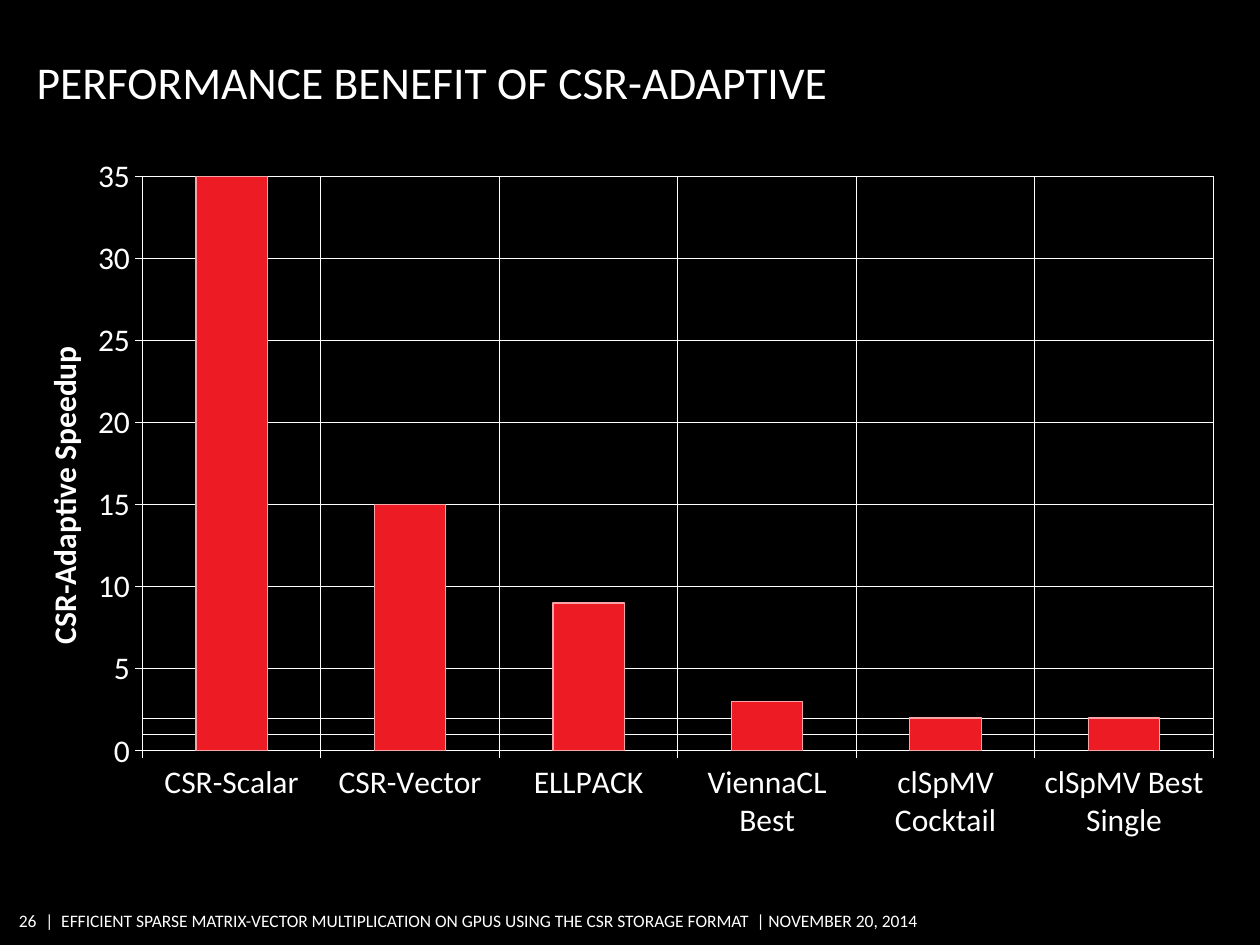
from lxml.etree import SubElement
from pptx import Presentation
from pptx.chart.data import CategoryChartData
from pptx.dml.color import RGBColor
from pptx.enum.chart import XL_CHART_TYPE, XL_TICK_MARK
from pptx.enum.shapes import MSO_CONNECTOR
from pptx.enum.text import MSO_ANCHOR, PP_ALIGN
from pptx.oxml import parse_xml
from pptx.oxml.ns import nsdecls, qn
from pptx.util import Inches, Pt

TITLE = "PERFORMANCE BENEFIT OF CSR-ADAPTIVE"
AXIS_TITLE = "CSR-Adaptive Speedup"
SPEEDUPS = {
    "CSR-Scalar": 35,
    "CSR-Vector": 15,
    "ELLPACK": 9,
    "ViennaCL Best": 3,
    "clSpMV Cocktail": 2,
    "clSpMV Best Single": 2,
}
FOOTER = [
    ("26", 0.13, 0.16, PP_ALIGN.RIGHT),
    ("|  EFFICIENT SPARSE MATRIX-VECTOR MULTIPLICATION ON GPUS USING THE CSR "
     "STORAGE FORMAT  | NOVEMBER 20, 2014", 0.36, 7.08, PP_ALIGN.LEFT),
]
CHART = (0.29, 1.18, 9.49, 5.64)
PLOT = (1.13, 1.4, 8.5, 4.56)
GUIDE_YS = [5.83, 5.7]
BLACK, WHITE, RED, PINK = "000000", "FFFFFF", "ED1C24", "F8A4A7"


def rgb(value):
    """Turn a hex string into a colour."""
    return RGBColor.from_string(value)


def style_font(font, size, bold=False):
    """Apply the slide's white Calibri at the given size."""
    for name, value in dict(name="Calibri", size=Pt(size), bold=bold).items():
        setattr(font, name, value)
    font.color.rgb = rgb(WHITE)


def style_line(line, color=WHITE):
    """Draw a thin line in the given colour."""
    line.color.rgb = rgb(color)
    line.width = Pt(0.75)


def write(sp, text, size, align, **frame):
    """Fill a shape with one styled paragraph."""
    tf = sp.text_frame
    for name, value in frame.items():
        setattr(tf, name, value)
    p = tf.paragraphs[0]
    p.alignment = align
    r = p.add_run()
    r.text = text
    style_font(r.font, size)


def set_layout(parent, index, places, target=""):
    """Give a chart part a manual layout in fractions of the chart."""
    for old in parent.findall(qn("c:layout")):
        parent.remove(old)
    values = "".join(f'<c:{k} val="{v:.4f}"/>' for k, v in places.items())
    parent.insert(index, parse_xml(
        f'<c:layout {nsdecls("c")}><c:manualLayout>{target}<c:xMode val="edge"/>'
        f'<c:yMode val="edge"/>{values}</c:manualLayout></c:layout>'))


def add_guide(s, y):
    """Add a horizontal guide line across the plot."""
    left, _, width, _ = PLOT
    line = s.shapes.add_connector(MSO_CONNECTOR.STRAIGHT, Inches(left), Inches(y),
                                  Inches(left + width), Inches(y))
    style_line(line.line)
    SubElement(line._element.spPr, qn("a:effectLst"))


def add_speedup_chart(s):
    """Add the column chart of speedups."""
    data = CategoryChartData()
    data.categories = list(SPEEDUPS)
    data.add_series("Series 1", list(SPEEDUPS.values()))
    chart = s.shapes.add_chart(XL_CHART_TYPE.COLUMN_CLUSTERED,
                               *(Inches(v) for v in CHART), data).chart
    chart.has_legend = chart.has_title = False
    style_font(chart.font, 10)
    for axis in (chart.category_axis, chart.value_axis):
        axis.has_major_gridlines = True
        axis.major_tick_mark = XL_TICK_MARK.OUTSIDE
        style_line(axis.major_gridlines.format.line)
        style_line(axis.format.line)
        style_font(axis.tick_labels.font, 18)
    axis = chart.value_axis
    for name, value in dict(minimum_scale=0, maximum_scale=35, major_unit=5).items():
        setattr(axis, name, value)
    tf = axis.axis_title.text_frame
    tf.text = AXIS_TITLE
    style_font(tf.paragraphs[0].runs[0].font, 18, True)
    body = tf._txBody.find(qn("a:bodyPr"))
    body.set("rot", "-5400000")
    body.set("vert", "horz")
    set_layout(axis.axis_title._element, 1, dict(x=0, y=0.27))
    plot = chart.plots[0]
    plot.gap_width = 150
    plot.vary_by_categories = False
    bars = plot.series[0].format
    bars.fill.solid()
    bars.fill.fore_color.rgb = rgb(RED)
    style_line(bars.line, PINK)
    left, top, width, height = CHART
    x, y, w, h = PLOT
    set_layout(chart._chartSpace.chart.plotArea, 0,
               dict(x=(x - left) / width, y=(y - top) / height, w=w / width, h=h / height),
               '<c:layoutTarget val="inner"/>')


def main():
    """Build and save the slide."""
    prs = Presentation()
    prs.slide_width, prs.slide_height = Inches(10), Inches(7.5)
    s = prs.slides.add_slide(prs.slide_layouts[5])
    s.background.fill.solid()
    s.background.fill.fore_color.rgb = rgb(BLACK)
    for text, left, width, align in FOOTER:
        sp = s.shapes.add_textbox(Inches(left), Inches(7.18), Inches(width), Inches(0.26))
        write(sp, text, 10, align, word_wrap=False, vertical_anchor=MSO_ANCHOR.MIDDLE,
              margin_left=0, margin_right=0, margin_top=Inches(0.04),
              margin_bottom=Inches(0.04))
    for y in GUIDE_YS:
        add_guide(s, y)
    title = s.shapes.title
    title.left, title.top = Inches(0.29), Inches(0.34)
    title.width, title.height = Inches(8.2), Inches(0.52)
    write(title, TITLE, 26, PP_ALIGN.LEFT, word_wrap=True, vertical_anchor=MSO_ANCHOR.BOTTOM,
          margin_left=0, margin_right=0, margin_top=Inches(0.05), margin_bottom=0)
    add_speedup_chart(s)
    prs.save("out.pptx")


if __name__ == "__main__":
    main()
